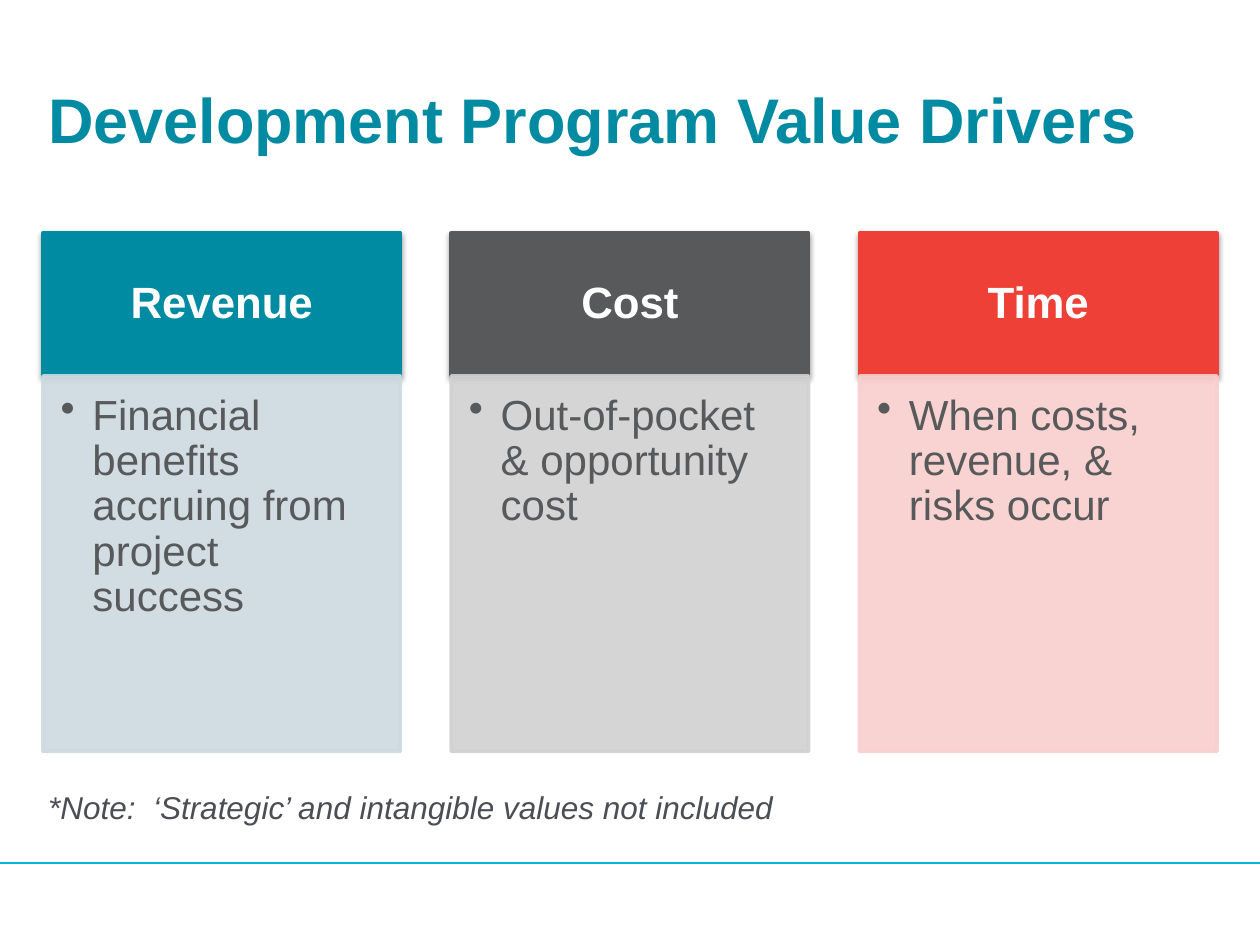
from dataclasses import dataclass

from lxml.etree import SubElement
from pptx import Presentation
from pptx.dml.color import RGBColor
from pptx.enum.shapes import MSO_CONNECTOR, MSO_SHAPE
from pptx.enum.text import MSO_ANCHOR as Anchor, PP_ALIGN as Align
from pptx.oxml.ns import qn
from pptx.util import Cm, Pt


@dataclass(frozen=True)
class Theme:
    font: str = "Arial"
    teal: str = "008BA2"
    gray: str = "58595B"
    red: str = "EE4036"
    pale_teal: str = "CCDAE0"
    pale_gray: str = "D1D1D2"
    pale_red: str = "F8CFCE"
    white: str = "FFFFFF"
    note: str = "4A4F55"
    rule: str = "00B7D5"
    title_size: int = 36
    header_size: int = 25
    body_size: int = 24
    note_size: int = 18


@dataclass(frozen=True)
class Driver:
    name: str
    detail: str
    color: str
    pale: str


@dataclass(frozen=True)
class Area:
    left: float
    top: float
    width: float
    height: float

    def lengths(self) -> list:
        return [Cm(value) for value in (self.left, self.top, self.width, self.height)]


THEME = Theme()
DRIVERS = (
    Driver("Revenue", "Financial benefits accruing from project success",
           THEME.teal, THEME.pale_teal),
    Driver("Cost", "Out-of-pocket & opportunity cost", THEME.gray, THEME.pale_gray),
    Driver("Time", "When costs, revenue, & risks occur", THEME.red, THEME.pale_red),
)
SLIDE_WIDTH, SLIDE_HEIGHT = 25.4, 19.05
COLUMN_WIDTH, COLUMN_PITCH = 7.21, 8.23
COLUMN_LEFT = (SLIDE_WIDTH - COLUMN_WIDTH - 2 * COLUMN_PITCH) / 2
HEADER_TOP, HEADER_HEIGHT = 4.7, 2.88
PANEL_HEIGHT = 7.57
TEXT_LEFT, TEXT_WIDTH = 0.97, 23.5
RULE_TOP = 17.4


def write(shape, text: str, size: int, color: str, margins: tuple,
          anchor=Anchor.TOP, align=Align.LEFT, bold=False, italic=False):
    frame = shape.text_frame
    frame.word_wrap = True
    frame.vertical_anchor = anchor
    frame.margin_left, frame.margin_top, frame.margin_right, frame.margin_bottom = (
        Cm(margin) for margin in margins)
    frame.text = text
    para = frame.paragraphs[0]
    para.alignment = align
    font = para.runs[0].font
    font.name, font.size = THEME.font, Pt(size)
    font.bold, font.italic = bold, italic
    font.color.rgb = RGBColor.from_string(color)
    return para


def add_text(page, area: Area, text: str, size: int, color: str, **style) -> None:
    box = page.shapes.add_textbox(*area.lengths())
    write(box, text, size, color, (0, 0, 0, 0), **style)


def add_block(page, area: Area, color: str):
    block = page.shapes.add_shape(MSO_SHAPE.RECTANGLE, *area.lengths())
    block.shadow.inherit = False
    block.fill.solid()
    block.fill.fore_color.rgb = RGBColor.from_string(color)
    block.line.color.rgb = RGBColor.from_string(color)
    block.line.width = Pt(2)
    return block


def set_alpha(color_element, percent: int) -> None:
    SubElement(color_element, qn("a:alpha"), val=str(percent * 1000))


def add_shadow(block) -> None:
    effects = block._element.spPr.find(qn("a:effectLst"))
    shadow = SubElement(effects, qn("a:outerShdw"), blurRad=str(Pt(3.1)),
                        dist=str(Pt(1.6)), dir="5400000", rotWithShape="0")
    set_alpha(SubElement(shadow, qn("a:srgbClr"), val="000000"), 38)


def add_bullet(para) -> None:
    properties = para._p.get_or_add_pPr()
    properties.set("marL", str(Cm(0.64)))
    properties.set("indent", str(-Cm(0.64)))
    SubElement(properties, qn("a:buChar"), char="•")


def add_driver(page, driver: Driver, left: float) -> None:
    header = add_block(page, Area(left, HEADER_TOP, COLUMN_WIDTH, HEADER_HEIGHT), driver.color)
    add_shadow(header)
    title = write(header, driver.name, THEME.header_size, THEME.white,
                  (0.48, 0.28, 0.48, 0.28), Anchor.MIDDLE, Align.CENTER, bold=True)
    title.line_spacing = 0.9

    panel_area = Area(left, HEADER_TOP + HEADER_HEIGHT, COLUMN_WIDTH, PANEL_HEIGHT)
    panel = add_block(page, panel_area, driver.pale)
    for color_element in panel._element.spPr.iter(qn("a:srgbClr")):
        set_alpha(color_element, 90)
    detail = write(panel, driver.detail, THEME.body_size, THEME.gray,
                   (0.36, 0.36, 0.48, 0.53))
    detail.line_spacing = 0.9
    add_bullet(detail)


def add_rule(page) -> None:
    rule = page.shapes.add_connector(MSO_CONNECTOR.STRAIGHT, Cm(0), Cm(RULE_TOP),
                                     Cm(SLIDE_WIDTH), Cm(RULE_TOP))
    rule.line.color.rgb = RGBColor.from_string(THEME.rule)
    rule.line.width = Pt(0.75)
    SubElement(rule._element.spPr, qn("a:effectLst"))


def main() -> None:
    deck = Presentation()
    deck.slide_width, deck.slide_height = Cm(SLIDE_WIDTH), Cm(SLIDE_HEIGHT)
    page = deck.slides.add_slide(deck.slide_layouts[6])
    add_rule(page)
    add_text(page, Area(TEXT_LEFT, 1.32, TEXT_WIDTH, 2.13),
             "Development Program Value Drivers", THEME.title_size, THEME.teal,
             anchor=Anchor.MIDDLE, bold=True)
    add_text(page, Area(TEXT_LEFT, 15.88, TEXT_WIDTH, 1.32),
             "*Note:  ‘Strategic’ and intangible values not included",
             THEME.note_size, THEME.note, italic=True)
    for index, driver in enumerate(DRIVERS):
        add_driver(page, driver, COLUMN_LEFT + index * COLUMN_PITCH)
    deck.save("out.pptx")


if __name__ == "__main__":
    main()
